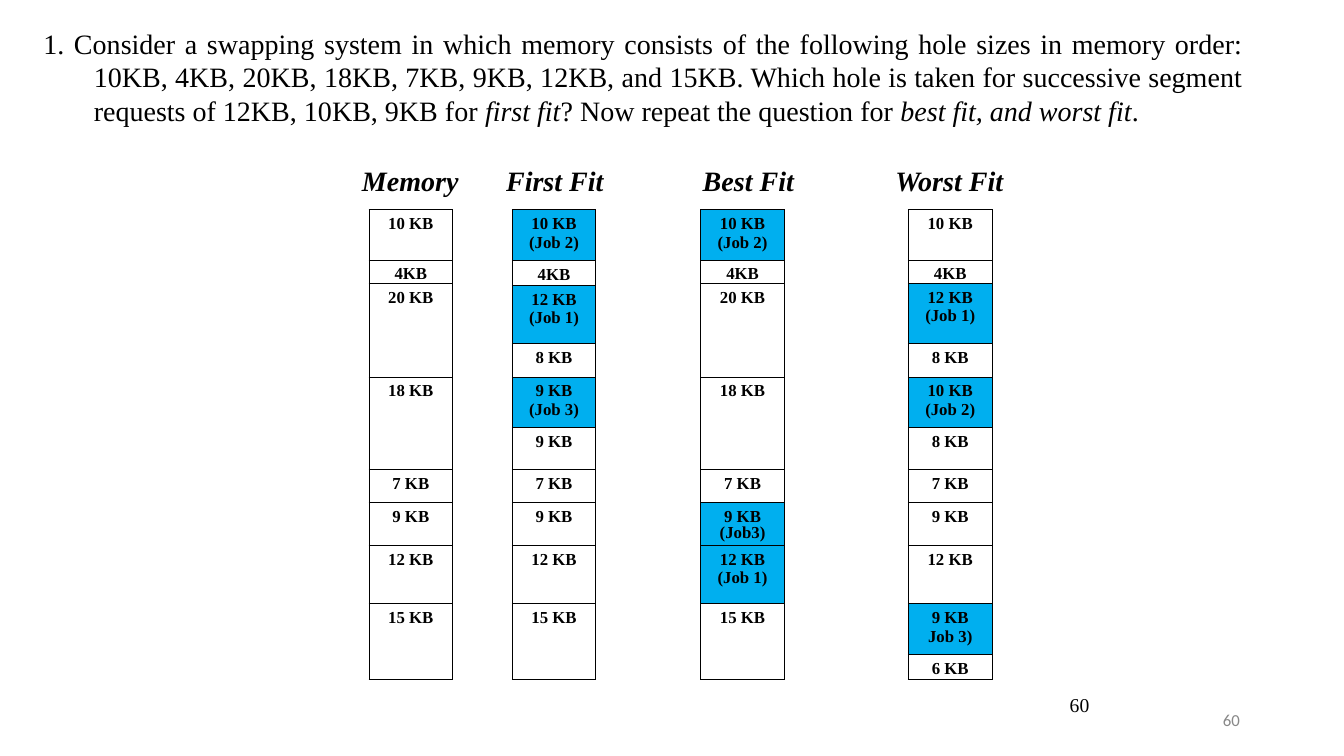
from lxml import etree
from pptx import Presentation
from pptx.dml.color import RGBColor
from pptx.enum.text import MSO_ANCHOR as Anchor, PP_ALIGN as Align
from pptx.oxml.ns import qn
from pptx.util import Inches, Pt

COLORS = {"ink": "000000", "job": "00AFEF", "muted": "888888"}
SERIF, SANS = "Times New Roman", "Calibri"

# Question as (text, italic)
QUESTION = [
    ("1. Consider a swapping system in which memory consists of the following hole "
     "sizes in memory order: 10KB, 4KB, 20KB, 18KB, 7KB, 9KB, 12KB, and 15KB. Which "
     "hole is taken for successive segment requests of 12KB, 10KB, 9KB for ", False),
    ("first fit", True),
    ("? Now repeat the question for ", False),
    ("best fit, and worst fit", True),
    (".", False),
]
HEADINGS = ["Memory", "First Fit", "Best Fit", "Worst Fit"]
HEADING_TABS = [1.43, 3.38, 5.29]

# Each table: left edge, then rows of (height, size, job)
MEMORY_MAPS = [
    (3.66, [(0.5, "10 KB", ""), (0.23, "4KB", ""), (0.93, "20 KB", ""),
            (0.92, "18 KB", ""), (0.33, "7 KB", ""), (0.42, "9 KB", ""),
            (0.58, "12 KB", ""), (0.75, "15 KB", "")]),
    (5.08, [(0.5, "10 KB", "(Job 2)"), (0.25, "4KB", ""), (0.58, "12 KB", "(Job 1)"),
            (0.33, "8 KB", ""), (0.5, "9 KB", "(Job 3)"), (0.42, "9 KB", ""),
            (0.33, "7 KB", ""), (0.42, "9 KB", ""), (0.58, "12 KB", ""),
            (0.75, "15 KB", "")]),
    (6.95, [(0.5, "10 KB", "(Job 2)"), (0.23, "4KB", ""), (0.93, "20 KB", ""),
            (0.92, "18 KB", ""), (0.33, "7 KB", ""), (0.42, "9 KB", "(Job3)"),
            (0.58, "12 KB", "(Job 1)"), (0.75, "15 KB", "")]),
    (9.01, [(0.5, "10 KB", ""), (0.23, "4KB", ""), (0.6, "12 KB", "(Job 1)"),
            (0.33, "8 KB", ""), (0.5, "10 KB", "(Job 2)"), (0.42, "8 KB", ""),
            (0.33, "7 KB", ""), (0.42, "9 KB", ""), (0.58, "12 KB", ""),
            (0.5, "9 KB", "Job 3)"), (0.25, "6 KB", "")]),
]
MAP_TOP, MAP_WIDTH = 2.08, 0.83
# Exact line spacing in points, by row height, for rows too low for normal lines
SIZE_LINE = {0.23: 12.7, 0.25: 13.7}
JOB_LINE = {0.42: 11.3}


def add_span(para, text, size, color="ink", name=SERIF, **style):
    span = para.add_run()
    span.text = text
    span.font.color.rgb = RGBColor.from_string(COLORS[color])
    for key, value in {"size": Pt(size), "name": name, **style}.items():
        setattr(span.font, key, value)


def add_box(page, left, top, width, height, wrap=True):
    """Add a text box without side margins and return its first paragraph."""
    frame = page.shapes.add_textbox(*map(Inches, (left, top, width, height))).text_frame
    margins = {"margin_left": 0, "margin_right": 0, "margin_bottom": 0,
               "margin_top": Inches(0.01), "word_wrap": wrap}
    for key, value in margins.items():
        setattr(frame, key, value)
    para = frame.paragraphs[0]
    para.space_before = Pt(1)
    return frame, para


def add_question(page):
    frame, para = add_box(page, 0.42, 0.24, 11.91, 1.03)
    frame.vertical_anchor = Anchor.MIDDLE
    para.alignment = Align.JUSTIFY
    props = para._p.get_or_add_pPr()
    props.set("marL", str(Inches(0.51)))
    props.set("indent", str(Inches(-0.5)))
    for text, italic in QUESTION:
        add_span(para, text, 20, italic=italic)


def add_headings(page):
    para = add_box(page, 3.59, 1.61, 6.37, 0.36)[1]
    stops = etree.SubElement(para._p.get_or_add_pPr(), qn("a:tabLst"))
    for position in HEADING_TABS:
        etree.SubElement(stops, qn("a:tab"), pos=str(Inches(position)), algn="l")
    add_span(para, "\t".join(HEADINGS), 20, bold=True, italic=True)


def add_borders(cell):
    props = cell._tc.get_or_add_tcPr()
    for side in ("lnL", "lnR", "lnT", "lnB"):
        line = etree.SubElement(props, qn(f"a:{side}"), w=str(Pt(0.75)))
        fill = etree.SubElement(line, qn("a:solidFill"))
        etree.SubElement(fill, qn("a:srgbClr"), val=COLORS["ink"])


def fill_cell(cell, height, size, job):
    for side in ("margin_left", "margin_right", "margin_bottom"):
        setattr(cell, side, 0)
    cell.margin_top = Inches(0.05)
    add_borders(cell)
    if job:
        cell.fill.solid()
        cell.fill.fore_color.rgb = RGBColor.from_string(COLORS["job"])
    else:
        cell.fill.background()
    para = cell.text_frame.paragraphs[0]
    para.space_before = Pt(3.3)
    lines = [(para, size, SIZE_LINE)]
    if job:
        lines.append((cell.text_frame.add_paragraph(), job, JOB_LINE))
    for para, text, spacing in lines:
        para.alignment = Align.CENTER
        if height in spacing:
            para.line_spacing = Pt(spacing[height])
        add_span(para, text, 12, bold=True)


def add_memory_map(page, left, rows):
    total = sum(height for height, _, _ in rows)
    place = map(Inches, (left, MAP_TOP, MAP_WIDTH, total))
    table = page.shapes.add_table(len(rows), 1, *place).table
    table.first_row = table.horz_banding = False
    for index, (height, size, job) in enumerate(rows):
        table.rows[index].height = Inches(height)
        fill_cell(table.cell(index, 0), height, size, job)


def main():
    deck = Presentation()
    deck.slide_width, deck.slide_height = Inches(13.33), Inches(7.5)
    page = deck.slides.add_slide(deck.slide_layouts[6])
    add_question(page)
    add_headings(page)
    for left, rows in MEMORY_MAPS:
        add_memory_map(page, left, rows)
    add_span(add_box(page, 10.61, 6.86, 0.23, 0.26, False)[1], "60", 14)
    add_span(add_box(page, 12.13, 7.03, 0.2, 0.23, False)[1], "60", 12, "muted", SANS)
    deck.save("out.pptx")


if __name__ == "__main__":
    main()
